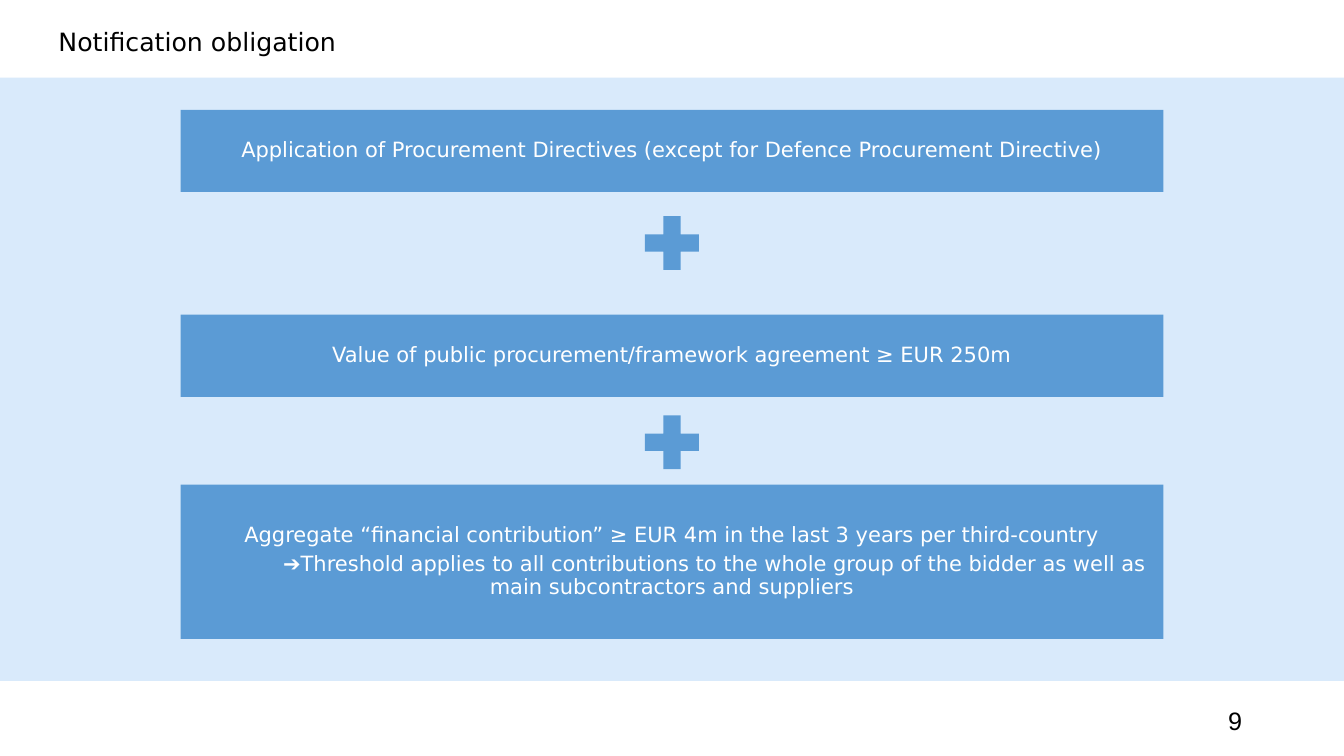
from pptx import Presentation
from pptx.dml.color import RGBColor
from pptx.enum.shapes import MSO_SHAPE as Shape
from pptx.enum.text import MSO_ANCHOR as Anchor, PP_ALIGN as Align
from pptx.util import Cm, Pt

TITLE = "Notification obligation"
PAGE = "9"
# top, height and paragraphs of each condition
BOXES = [
    (2.77, 2.07, ["Application of Procurement Directives (except for Defence Procurement Directive)"]),
    (7.93, 2.07, ["Value of public procurement/framework agreement ≥ EUR 250m"]),
    (12.21, 3.89, [
        "Aggregate “financial contribution” ≥ EUR 4m in the last 3 years per third-country",
        "➔Threshold applies to all contributions to the whole group of the bidder "
        "as well as main subcontractors and suppliers",
    ]),
]
PLUS_TOPS = [5.2, 10.22]
COLORS = {"band": "D9EAFB", "box": "5B9BD5", "light": "FFFFFF", "dark": "000000"}
SANS = "DejaVu Sans"
WIDTH, HEIGHT = 33.87, 19.05
BOX_W, PLUS = 24.77, 1.85
INDENT = 2.16


def color(name):
    return RGBColor.from_string(COLORS[name])


def add_shape(kind, left, top, width, height, fill):
    shape = slide.shapes.add_shape(kind, Cm(left), Cm(top), Cm(width), Cm(height))
    shape.shadow.inherit = False
    shape.fill.solid()
    shape.fill.fore_color.rgb = color(fill)
    shape.line.fill.background()
    return shape


def style(para, size, font, tone, align, spacing=None):
    para.alignment = align
    para.line_spacing = spacing
    para.font.size = Pt(size)
    para.font.name = font
    para.font.color.rgb = color(tone)


def place(shape, left, top, width, height):
    shape.left, shape.top = Cm(left), Cm(top)
    shape.width, shape.height = Cm(width), Cm(height)


deck = Presentation()
deck.slide_width, deck.slide_height = Cm(WIDTH), Cm(HEIGHT)
slide = deck.slides.add_slide(deck.slide_layouts[5])

add_shape(Shape.RECTANGLE, 0, 1.96, WIDTH, 15.2, "band")

title = slide.shapes.title
place(title, 1.22, 0.61, 30.99, 1.12)
title.text_frame.text = TITLE
title.text_frame.vertical_anchor = Anchor.TOP
style(title.text_frame.paragraphs[0], 18, SANS, "dark", Align.LEFT, 0.9)

page = slide.shapes.add_textbox(Cm(23.93), Cm(17.65), Cm(7.62), Cm(1.02)).text_frame
page.word_wrap = True
page.vertical_anchor = Anchor.MIDDLE
page.text = PAGE
style(page.paragraphs[0], 18, "Arial", "dark", Align.RIGHT)

for top, height, lines in BOXES:
    box = add_shape(Shape.RECTANGLE, (WIDTH - BOX_W) / 2, top, BOX_W, height, "box")
    frame = box.text_frame
    frame.word_wrap = True
    frame.vertical_anchor = Anchor.MIDDLE
    frame.margin_left = frame.margin_right = Cm(0.3)
    frame.text = "\n".join(lines)
    for para in frame.paragraphs:
        style(para, 15, SANS, "light", Align.CENTER, 0.9)
        para.space_after = Pt(5)
    for para in frame.paragraphs[1:]:
        props = para._p.get_or_add_pPr()
        props.set("marL", "0")
        props.set("indent", str(Cm(INDENT)))

for top in PLUS_TOPS:
    add_shape(Shape.MATH_PLUS, (WIDTH - PLUS) / 2, top, PLUS, PLUS, "box")

deck.save("out.pptx")
